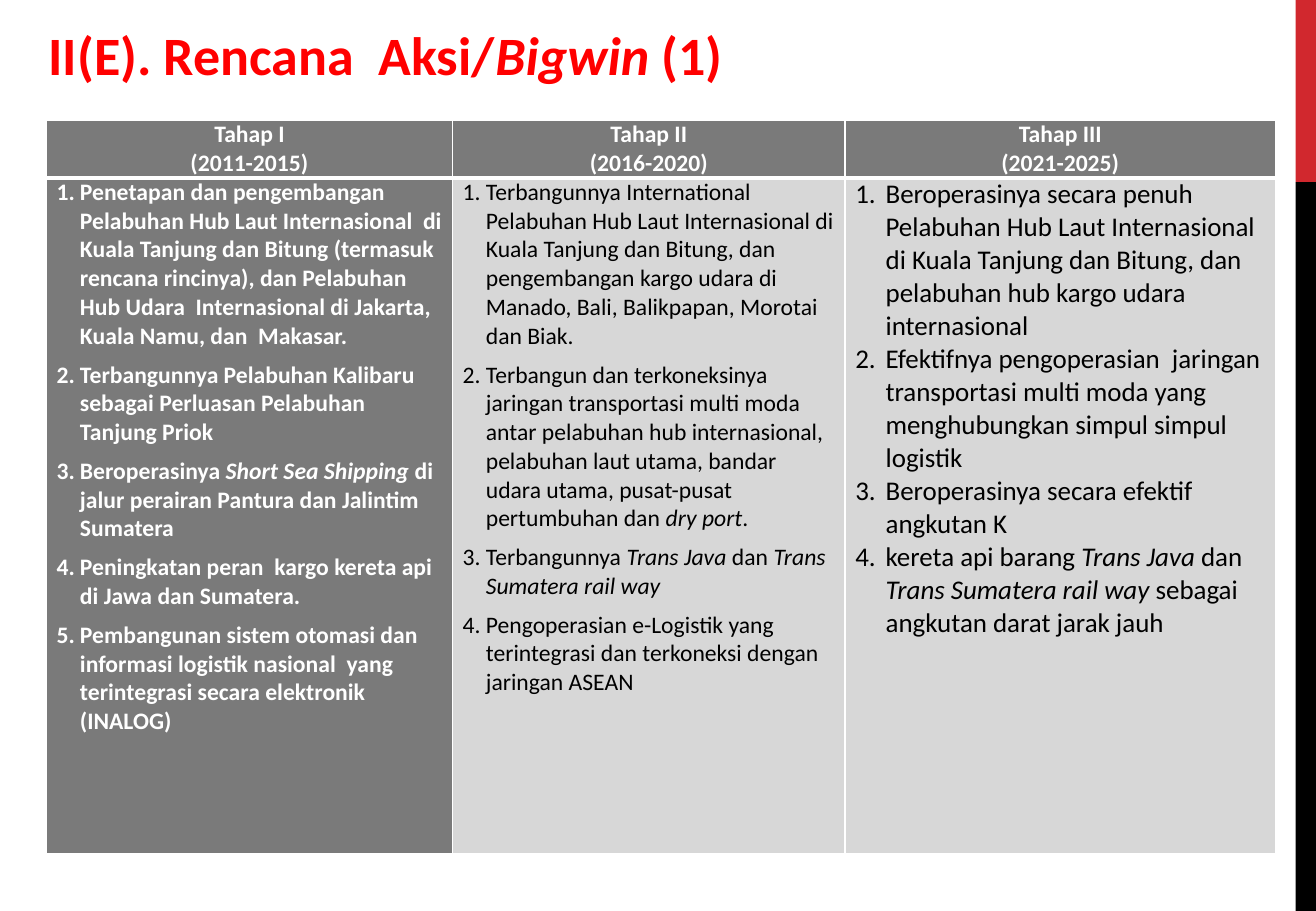
from lxml import etree
from pptx import Presentation
from pptx.dml.color import RGBColor
from pptx.enum.shapes import MSO_SHAPE
from pptx.enum.text import MSO_ANCHOR, MSO_AUTO_SIZE, PP_ALIGN
from pptx.oxml.ns import qn
from pptx.util import Pt

RECT = MSO_SHAPE.RECTANGLE
BOTTOM = MSO_ANCHOR.BOTTOM
LEFT, CENTER = PP_ALIGN.LEFT, PP_ALIGN.CENTER
NO_FIT = MSO_AUTO_SIZE.NONE

WHITE, BLACK, RED = "FFFFFF", "000000", "FF0000"
DARK, LIGHT = "7A7A7A", "D7D7D7"

# Text between asterisks is italic.
TITLE = "II(E). Rencana  Aksi/*Bigwin *(1)"
HEADS = [
    "Tahap I\n(2011-2015)",
    "Tahap II\n(2016-2020)",
    "Tahap III\n(2021-2025)",
]
PLANS = [
    [
        "Penetapan dan pengembangan Pelabuhan Hub Laut Internasional  di Kuala Tanjung "
        "dan Bitung (termasuk rencana rincinya), dan Pelabuhan Hub Udara  Internasional "
        "di Jakarta, Kuala Namu, dan  Makasar.",
        "Terbangunnya Pelabuhan Kalibaru sebagai Perluasan Pelabuhan Tanjung Priok",
        "Beroperasinya *Short Sea Shipping* di jalur perairan Pantura dan Jalintim Sumatera",
        "Peningkatan peran  kargo kereta api di Jawa dan Sumatera.",
        "Pembangunan sistem otomasi dan informasi logistik nasional  yang terintegrasi "
        "secara elektronik (INALOG)",
    ],
    [
        "Terbangunnya International Pelabuhan Hub Laut Internasional di Kuala Tanjung "
        "dan Bitung, dan pengembangan kargo udara di Manado, Bali, Balikpapan, Morotai "
        "dan Biak.",
        "Terbangun dan terkoneksinya jaringan transportasi multi moda antar pelabuhan hub "
        "internasional, pelabuhan laut utama, bandar udara utama, pusat-pusat  pertumbuhan "
        "dan *dry port*.",
        "Terbangunnya *Trans Java* dan *Trans Sumatera rail way*",
        "Pengoperasian e-Logistik yang terintegrasi dan terkoneksi dengan jaringan ASEAN",
    ],
    [
        "Beroperasinya secara penuh Pelabuhan Hub Laut Internasional di Kuala Tanjung "
        "dan Bitung, dan pelabuhan hub kargo udara internasional",
        "Efektifnya pengoperasian  jaringan transportasi multi moda yang menghubungkan "
        "simpul simpul logistik",
        "Beroperasinya secara efektif  angkutan K",
        "kereta api barang *Trans Java* dan *Trans Sumatera rail way* sebagai angkutan "
        "darat jarak jauh",
    ],
]
# Fill, text colour, bold, size, indent, space after
LOOKS = [
    (DARK, WHITE, True, 14, 23, 6),
    (LIGHT, BLACK, False, 14, 23, 6),
    (LIGHT, BLACK, False, 16, 30, 0),
]


def px(n):
    """Turn px, 120 to the inch, into EMU."""
    return n * 7620


def rgb(code):
    return RGBColor.from_string(code)


class Deck:
    font = "Calibri"

    def __init__(self, wide, high):
        self.prs = Presentation()
        self.prs.slide_width, self.prs.slide_height = px(wide), px(high)
        self.slide = self.prs.slides.add_slide(self.prs.slide_layouts[5])

    def text(self, para, words, size, color, bold):
        """Fill a paragraph, with every second part between asterisks italic."""
        for i, part in enumerate(words.split("*")):
            if part:
                run = para.add_run()
                run.text = part
                font = run.font
                font.name, font.size, font.bold = self.font, Pt(size), bold
                font.italic = i % 2 == 1
                font.color.rgb = rgb(color)

    def title(self, words, x, y, w, h):
        box = self.slide.shapes.title
        box.left, box.top, box.width, box.height = map(px, (x, y, w, h))
        frame = box.text_frame
        frame.auto_size, frame.vertical_anchor = NO_FIT, BOTTOM
        para = frame.paragraphs[0]
        para.alignment = LEFT
        self.text(para, words, 32, RED, True)

    def bar(self, x, y, w, h, color):
        shape = self.slide.shapes.add_shape(RECT, *map(px, (x, y, w, h)))
        shape.shadow.inherit = False
        shape.fill.solid()
        shape.fill.fore_color.rgb = rgb(color)
        shape.line.fill.background()

    def table(self, x, y, cols, rows):
        frame = self.slide.shapes.add_table(
            len(rows), len(cols), px(x), px(y), px(sum(cols)), px(sum(rows)))
        table = frame.table
        table.horz_banding = False
        for col, w in zip(table.columns, cols):
            col.width = px(w)
        for row, h in zip(table.rows, rows):
            row.height = px(h)
        return table

    def cell(self, cell, fill, side, top, bottom):
        """Set fill, side margins and white borders; widths are in points."""
        cell.margin_left = cell.margin_right = px(side)
        cell.margin_top = cell.margin_bottom = 0
        cell.fill.solid()
        cell.fill.fore_color.rgb = rgb(fill)
        props = cell._tc.get_or_add_tcPr()
        edges = (("lnL", 1), ("lnR", 1), ("lnT", top), ("lnB", bottom))
        for i, (tag, width) in enumerate(edges):
            line = etree.Element(qn("a:" + tag), w=str(Pt(width)))
            solid = etree.SubElement(line, qn("a:solidFill"))
            etree.SubElement(solid, qn("a:srgbClr"), val=WHITE)
            props.insert(i, line)

    def head(self, cell, words):
        self.cell(cell, DARK, 1, 1, 3)
        frame = cell.text_frame
        for i, line in enumerate(words.split("\n")):
            para = frame.add_paragraph() if i else frame.paragraphs[0]
            para.alignment = CENTER
            self.text(para, line, 14, WHITE, True)

    def plan(self, cell, items, look):
        """Fill a cell with a numbered list."""
        fill, color, bold, size, indent, after = look
        self.cell(cell, fill, 10, 3, 1)
        frame = cell.text_frame
        for i, item in enumerate(items):
            para = frame.add_paragraph() if i else frame.paragraphs[0]
            para.space_after = Pt(after)
            props = para._p.get_or_add_pPr()
            props.set("marL", str(px(indent)))
            props.set("indent", str(-px(indent)))
            etree.SubElement(props, qn("a:buFont"), typeface="+mj-lt")
            etree.SubElement(props, qn("a:buAutoNum"), type="arabicPeriod")
            self.text(para, item, size, color, bold)


def main():
    deck = Deck(1300, 900)
    deck.bar(1280, 0, 20, 180, "D1282E")
    deck.bar(1280, 180, 20, 720, BLACK)
    table = deck.table(46, 119, (401, 388, 425), (56, 668))
    for i, (head, items, look) in enumerate(zip(HEADS, PLANS, LOOKS)):
        deck.head(table.cell(0, i), head)
        deck.plan(table.cell(1, i), items, look)
    deck.title(TITLE, 36, 16, 1204, 75)
    deck.prs.save("out.pptx")


if __name__ == "__main__":
    main()
